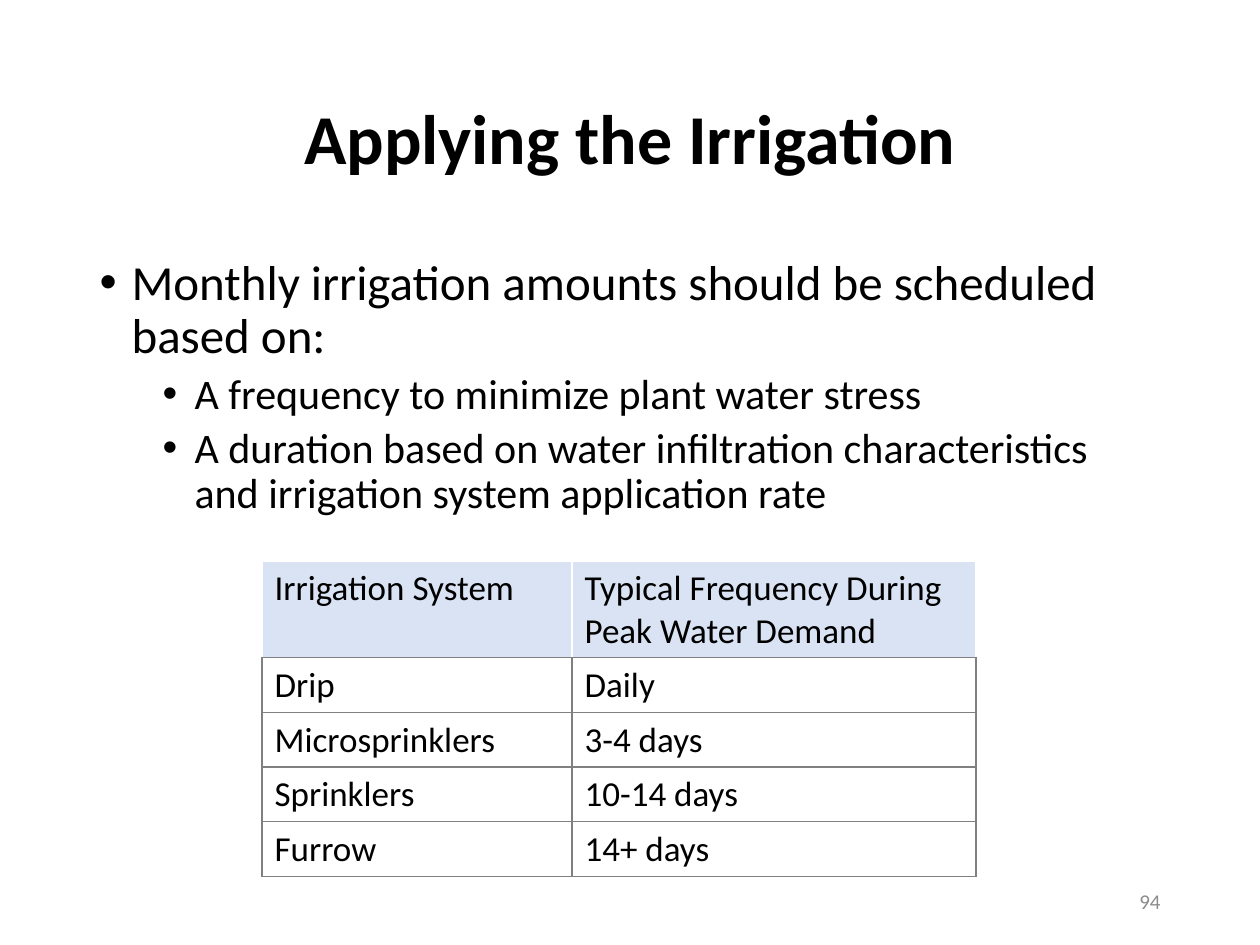
import dataclasses

import lxml.etree
import pptx
import pptx.dml.color
import pptx.enum.text
import pptx.oxml.ns
import pptx.util

PX = 914400 / 126
FONT = "Calibri"
BLACK = pptx.dml.color.RGBColor(0x00, 0x00, 0x00)
WHITE = pptx.dml.color.RGBColor(0xFF, 0xFF, 0xFF)
GRAY = pptx.dml.color.RGBColor(0x80, 0x80, 0x80)
PAGE_GRAY = pptx.dml.color.RGBColor(0x8C, 0x8C, 0x8C)
PALE_BLUE = pptx.dml.color.RGBColor(0xDA, 0xE3, 0xF3)
ALIGN = pptx.enum.text.PP_ALIGN
ANCHOR = pptx.enum.text.MSO_ANCHOR


@dataclasses.dataclass(frozen=True)
class Box:
    left: int
    top: int
    width: int
    height: int


@dataclasses.dataclass(frozen=True)
class Bullet:
    text: str
    level: int
    size: int
    before: int
    indent: int


@dataclasses.dataclass(frozen=True)
class Frequency:
    system: str
    interval: str


BULLETS = [
    Bullet("Monthly irrigation amounts should be scheduled based on:", 0, 28, 10, 32),
    Bullet("A frequency to minimize plant water stress", 1, 24, 5, 95),
    Bullet(
        "A duration based on water infiltration characteristics and "
        "irrigation system application rate", 1, 24, 5, 95,
    ),
]
FREQUENCIES = [
    Frequency("Irrigation System", "Typical Frequency During Peak Water Demand"),
    Frequency("Drip", "Daily"),
    Frequency("Microsprinklers", "3-4 days"),
    Frequency("Sprinklers", "10-14 days"),
    Frequency("Furrow", "14+ days"),
]
COLUMN_WIDTHS = [310, 404]
ROW_HEIGHT = 52


def px(length: int) -> pptx.util.Emu:
    return pptx.util.Emu(round(length * PX))


def frame(box: Box) -> list[pptx.util.Emu]:
    return [px(length) for length in dataclasses.astuple(box)]


def move(shape, box: Box) -> None:
    shape.left, shape.top, shape.width, shape.height = frame(box)


def add_run(paragraph, text: str, size: int, color=BLACK, bold: bool = False) -> None:
    run = paragraph.add_run()
    run.text = text
    run.font.name = FONT
    run.font.size = pptx.util.Pt(size)
    run.font.bold = bold
    run.font.color.rgb = color


def fill_title(title) -> None:
    move(title, Box(87, 50, 1086, 183))
    title.text_frame.auto_size = pptx.enum.text.MSO_AUTO_SIZE.NONE
    title.text_frame.vertical_anchor = ANCHOR.MIDDLE
    heading = title.text_frame.paragraphs[0]
    heading.alignment = ALIGN.CENTER
    heading.line_spacing = 0.9
    add_run(heading, "Applying the Irrigation", 40, bold=True)


def add_bullet(paragraph, bullet: Bullet) -> None:
    paragraph.level = bullet.level
    paragraph.line_spacing = 0.9
    paragraph.space_before = pptx.util.Pt(bullet.before)
    properties = paragraph._p.get_or_add_pPr()
    properties.set("marL", str(px(bullet.indent)))
    properties.set("indent", str(px(-32)))
    for tag, key, value in (("a:buFont", "typeface", "Arial"), ("a:buChar", "char", "•")):
        lxml.etree.SubElement(properties, pptx.oxml.ns.qn(tag)).set(key, value)
    add_run(paragraph, bullet.text, bullet.size)


def fill_body(body) -> None:
    move(body, Box(87, 252, 1086, 600))
    text = body.text_frame
    text.auto_size = pptx.enum.text.MSO_AUTO_SIZE.NONE
    for index, bullet in enumerate(BULLETS):
        add_bullet(text.add_paragraph() if index else text.paragraphs[0], bullet)


def add_border(cell, side: str, color) -> None:
    properties = cell._tc.get_or_add_tcPr()
    line = lxml.etree.SubElement(properties, pptx.oxml.ns.qn(f"a:ln{side}"))
    line.set("w", str(pptx.util.Pt(1)))
    solid = lxml.etree.SubElement(line, pptx.oxml.ns.qn("a:solidFill"))
    lxml.etree.SubElement(solid, pptx.oxml.ns.qn("a:srgbClr")).set("val", str(color))


def fill_cell(cell, text: str, is_header: bool) -> None:
    for side in "LRTB":
        add_border(cell, side, WHITE if is_header and side != "B" else GRAY)
    cell.fill.solid()
    cell.fill.fore_color.rgb = PALE_BLUE if is_header else WHITE
    add_run(cell.text_frame.paragraphs[0], text, 20)


def add_frequency_table(slide) -> None:
    count = len(FREQUENCIES)
    box = Box(262, 561, sum(COLUMN_WIDTHS), count * ROW_HEIGHT)
    table = slide.shapes.add_table(count, len(COLUMN_WIDTHS), *frame(box)).table
    for column, width in zip(table.columns, COLUMN_WIDTHS):
        column.width = px(width)
    for row, frequency in enumerate(FREQUENCIES):
        table.rows[row].height = px(ROW_HEIGHT)
        for column, text in enumerate(dataclasses.astuple(frequency)):
            fill_cell(table.cell(row, column), text, row == 0)


def add_page_number(slide) -> None:
    text = slide.shapes.add_textbox(*frame(Box(890, 876, 283, 50))).text_frame
    text.word_wrap = True
    text.vertical_anchor = ANCHOR.MIDDLE
    text.paragraphs[0].alignment = ALIGN.RIGHT
    add_run(text.paragraphs[0], "94", 12, PAGE_GRAY)


def main() -> None:
    presentation = pptx.Presentation()
    presentation.slide_width = px(1260)
    presentation.slide_height = px(945)
    slide = presentation.slides.add_slide(presentation.slide_layouts[1])
    fill_title(slide.shapes.title)
    fill_body(slide.placeholders[1])
    add_page_number(slide)
    add_frequency_table(slide)
    presentation.save("out.pptx")


if __name__ == "__main__":
    main()
